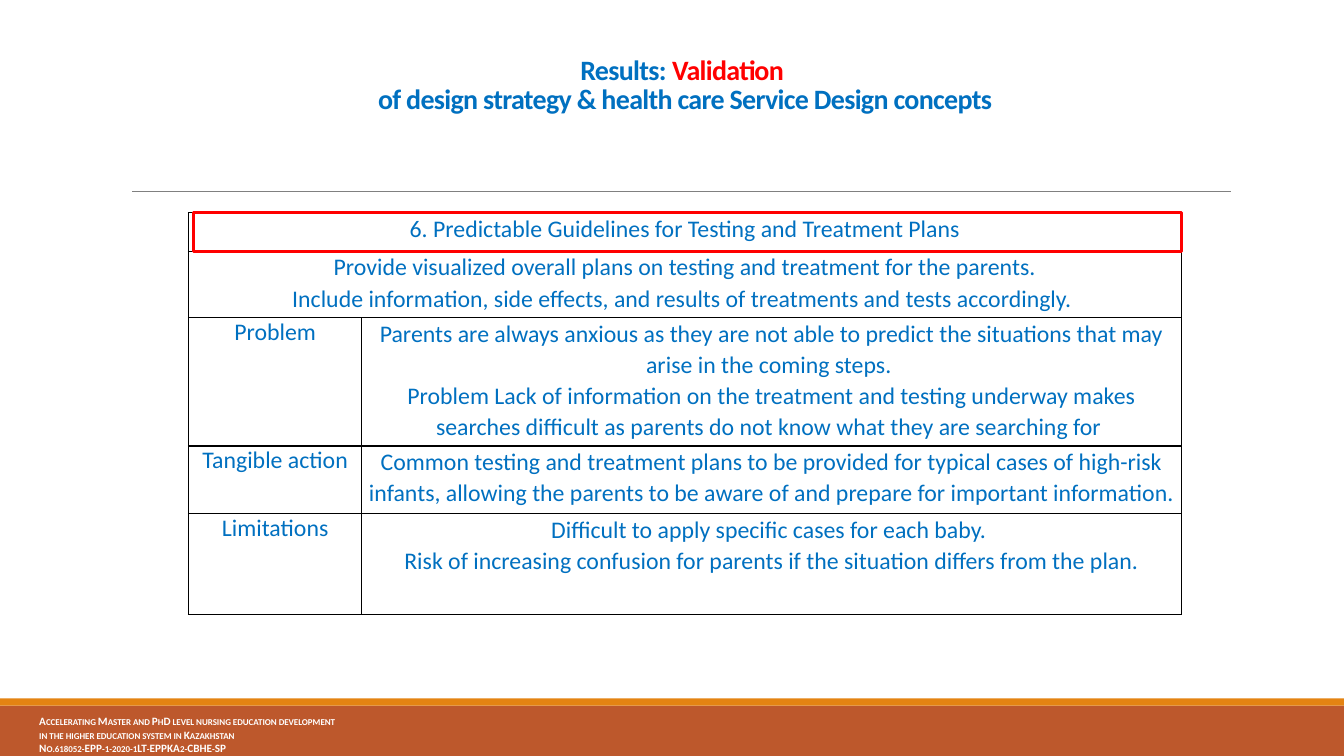
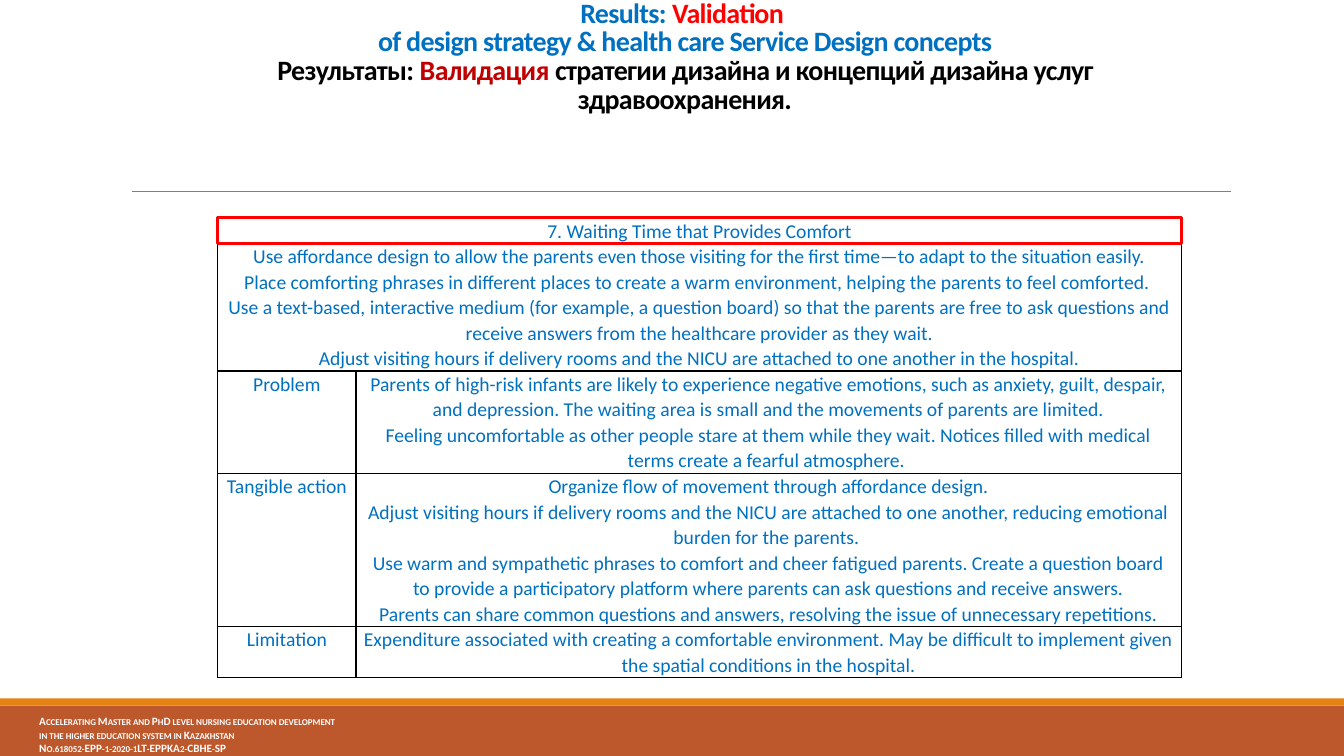
"""Builds two slides on the validation of health care service design concepts."""
from copy import deepcopy
from dataclasses import dataclass
from typing import NamedTuple, Optional, Sequence

from lxml.etree import SubElement
from pptx import Presentation
from pptx.dml.color import RGBColor
from pptx.enum.shapes import MSO_CONNECTOR as Connector, MSO_SHAPE as Shape
from pptx.enum.shapes import PP_PLACEHOLDER as Holder
from pptx.enum.text import MSO_ANCHOR as Anchor, MSO_AUTO_SIZE as AutoSize, PP_ALIGN as Align
from pptx.oxml.ns import qn
from pptx.util import Cm, Pt


@dataclass(frozen=True)
class Theme:
    font: str = "Calibri"
    white: str = "FFFFFF"
    black: str = "000000"
    blue: str = "0070C0"
    red: str = "FF0000"
    dark_red: str = "C00000"
    rust: str = "BD582C"
    orange: str = "E48312"
    grey: str = "808080"
    title_size: float = 20
    footer_size: float = 8
    border: float = 1
    marker: float = 2.25
    rule: float = 0.5


THEME = Theme()


class Run(NamedTuple):
    text: str
    color: str


class Box(NamedTuple):
    left: float
    top: float
    width: float
    height: float

    def lengths(self) -> tuple:
        return tuple(Cm(value) for value in self)


class Row(NamedTuple):
    height: float
    label: Optional[str]
    lines: Sequence[str]


@dataclass(frozen=True)
class Concept:
    title: Sequence[Run]
    left: float
    top: float
    columns: Sequence[float]
    rows: Sequence[Row]
    size: float
    margin: float
    label_spacing: float
    marker_inset: float


TITLE_BOX = Box(4.75, 0.2, 25.02, 2.82)
BANDS = (
    (Box(0, 17.78, 33.87, 1.27), THEME.rust),
    (Box(0, 17.6, 33.87, 0.18), THEME.orange),
)
FOOTER_BOX = Box(0.74, 17.88, 11.66, 1.3)
FOOTER = (
    "Accelerating Master and PhD level nursing education development",
    "in the higher education system in Kazakhstan",
    "No.618052-EPP-1-2020-1LT-EPPKA2-CBHE-SP",
)
ENGLISH_TITLE = (
    Run("Results: ", THEME.blue),
    Run("Validation \n", THEME.red),
    Run("of design strategy & health care Service Design concepts", THEME.blue),
)
RUSSIAN_TITLE = (
    Run("\nРезультаты: ", THEME.black),
    Run("Валидация", THEME.dark_red),
    Run(" стратегии дизайна и концепций дизайна услуг здравоохранения.", THEME.black),
)

CONCEPTS = (
    Concept(
        title=ENGLISH_TITLE,
        left=4.75, top=5.36, columns=(4.37, 20.65),
        size=17, margin=0.13, label_spacing=1, marker_inset=0.13,
        rows=(
            Row(0.97, None, ["6. Predictable Guidelines for Testing and Treatment Plans"]),
            Row(1.68, None, [
                "Provide visualized overall plans on testing and treatment for the parents.",
                "Include information, side effects, and results of treatments and tests accordingly. ",
            ]),
            Row(3.23, "Problem", [
                "Parents are always anxious as they are not able to predict the situations "
                "that may arise in the coming steps. ",
                "Problem Lack of information on the treatment and testing underway makes "
                "searches difficult as parents do not know what they are searching for ",
            ]),
            Row(1.7, "Tangible action", [
                "Common testing and treatment plans to be provided for typical cases of "
                "high-risk infants, allowing the parents to be aware of and prepare for "
                "important information. ",
            ]),
            Row(2.54, "Limitations", [
                "Difficult to apply specific cases for each baby. ",
                "Risk of increasing confusion for parents if the situation differs from the plan.",
            ]),
        ),
    ),
    Concept(
        title=ENGLISH_TITLE + RUSSIAN_TITLE,
        left=5.49, top=5.49, columns=(3.48, 20.8),
        size=14, margin=0.18, label_spacing=1.07, marker_inset=0,
        rows=(
            Row(0.6, None, ["7. Waiting Time that Provides Comfort"]),
            Row(2.97, None, [
                "Use affordance design to allow the parents even those visiting for the "
                "first time—to adapt to the situation easily.",
                "Place comforting phrases in different places to create a warm environment, "
                "helping the parents to feel comforted. ",
                "Use a text-based, interactive medium (for example, a question board) so that "
                "the parents are free to ask questions and receive answers from the healthcare "
                "provider as they wait.",
                "Adjust visiting hours if delivery rooms and the NICU are attached to one "
                "another in the hospital.",
            ]),
            Row(2.36, "Problem", [
                "Parents of high-risk infants are likely to experience negative emotions, such "
                "as anxiety, guilt, despair, and depression. The waiting area is small and the "
                "movements of parents are limited.",
                "Feeling uncomfortable as other people stare at them while they wait. Notices "
                "filled with medical terms create a fearful atmosphere. ",
            ]),
            Row(3.58, "Tangible action", [
                "Organize flow of movement through affordance design.",
                "Adjust visiting hours if delivery rooms and the NICU are attached to one "
                "another, reducing emotional burden for the parents. ",
                "Use warm and sympathetic phrases to comfort and cheer fatigued parents. Create "
                "a question board to provide a participatory platform where parents can ask "
                "questions and receive answers.",
                "Parents can share common questions and answers, resolving the issue of "
                "unnecessary repetitions.",
            ]),
            Row(1.27, "Limitation", [
                "Expenditure associated with creating a comfortable environment. May be "
                "difficult to implement given the spatial conditions in the hospital.",
            ]),
        ),
    ),
)


def rgb(color: str) -> RGBColor:
    return RGBColor.from_string(color)


def write(frame, paragraphs: Sequence[Sequence[Run]], *, size: float, bold: bool = False,
          align=Align.LEFT, spacing: float = 1, **attributes: str) -> None:
    """Fill a text frame; extra keywords become run property attributes."""
    frame.word_wrap = True
    for index, runs in enumerate(paragraphs):
        paragraph = frame.add_paragraph() if index else frame.paragraphs[0]
        paragraph.alignment, paragraph.line_spacing = align, spacing
        for text, color in runs:
            for position, piece in enumerate(text.split("\n")):
                if position:
                    paragraph.add_line_break()
                    line_break = paragraph._p.findall(qn("a:br"))[-1]
                    line_break.append(deepcopy(paragraph.runs[-1]._r.rPr))
                if not piece:
                    continue
                run = paragraph.add_run()
                run.text = piece
                run.font.name, run.font.size, run.font.bold = THEME.font, Pt(size), bold
                run.font.color.rgb = rgb(color)
                for key, value in attributes.items():
                    run._r.rPr.set(key, value)


def add_rectangle(slide, box: Box, fill: Optional[str] = None, line: Optional[str] = None):
    rectangle = slide.shapes.add_shape(Shape.RECTANGLE, *box.lengths())
    rectangle.shadow.inherit = False
    if fill:
        rectangle.fill.solid()
        rectangle.fill.fore_color.rgb = rgb(fill)
    else:
        rectangle.fill.background()
    if line:
        rectangle.line.color.rgb = rgb(line)
        rectangle.line.width = Pt(THEME.marker)
    else:
        rectangle.line.fill.background()
    return rectangle


def build_layout(slide) -> None:
    """Draw the bands, rule and footer, and hand them to the slide's layout."""
    layout = slide.slide_layout
    for holder in list(layout.placeholders):
        if holder.placeholder_format.type != Holder.TITLE:
            holder._element.getparent().remove(holder._element)
    shared = [add_rectangle(slide, box, fill=color) for box, color in BANDS]
    rule = slide.shapes.add_connector(Connector.STRAIGHT, Cm(3.33), Cm(4.83), Cm(31.01), Cm(4.83))
    rule.line.color.rgb = rgb(THEME.grey)
    rule.line.width = Pt(THEME.rule)
    SubElement(rule._element.spPr, qn("a:effectLst"))
    footer = slide.shapes.add_textbox(*FOOTER_BOX.lengths())
    write(footer.text_frame, [[Run(line, THEME.white)] for line in FOOTER],
          size=THEME.footer_size, bold=True, cap="small")
    for shape in (*shared, rule, footer):
        layout.shapes._spTree.append(shape._element)


def set_title(slide, runs: Sequence[Run]) -> None:
    title = slide.shapes.title
    title.left, title.top, title.width, title.height = TITLE_BOX.lengths()
    title.text_frame.vertical_anchor = Anchor.BOTTOM
    title.text_frame.auto_size = AutoSize.NONE
    write(title.text_frame, [runs], size=THEME.title_size, bold=True,
          align=Align.CENTER, spacing=0.85, spc="-50")


def style_cell(cell, margin: float) -> None:
    properties = cell._tc.get_or_add_tcPr()
    for side in ("lnL", "lnR", "lnT", "lnB"):
        edge = SubElement(properties, qn(f"a:{side}"), w=str(Pt(THEME.border)))
        SubElement(SubElement(edge, qn("a:solidFill")), qn("a:srgbClr"), val=THEME.black)
    cell.fill.solid()
    cell.fill.fore_color.rgb = rgb(THEME.white)
    cell.margin_left = cell.margin_right = Cm(margin)
    cell.margin_top = cell.margin_bottom = 0


def add_concept_table(slide, concept: Concept) -> None:
    box = Box(concept.left, concept.top, sum(concept.columns),
              sum(row.height for row in concept.rows))
    table = slide.shapes.add_table(len(concept.rows), len(concept.columns), *box.lengths()).table
    table.first_row = table.horz_banding = False
    for column, width in zip(table.columns, concept.columns):
        column.width = Cm(width)
    for index, row in enumerate(concept.rows):
        table.rows[index].height = Cm(row.height)
        label, body = table.cell(index, 0), table.cell(index, 1)
        for cell in (label, body):
            style_cell(cell, concept.margin)
        if row.label:
            write(label.text_frame, [[Run(row.label, THEME.blue)]], size=concept.size,
                  align=Align.CENTER, spacing=concept.label_spacing)
        else:
            label.merge(body)
            body = label
        write(body.text_frame, [[Run(line, THEME.blue)] for line in row.lines],
              size=concept.size, align=Align.CENTER, spacing=1.07)
    inset = concept.marker_inset
    add_rectangle(slide, Box(box.left + inset, box.top, box.width - inset,
                             max(concept.rows[0].height, 0.64)), line=THEME.red)


def main() -> None:
    deck = Presentation()
    deck.slide_width, deck.slide_height = Cm(33.87), Cm(19.05)
    title_only = deck.slide_layouts[5]
    for number, concept in enumerate(CONCEPTS):
        slide = deck.slides.add_slide(title_only)
        if number == 0:
            build_layout(slide)
        set_title(slide, concept.title)
        add_concept_table(slide, concept)
    deck.save("out.pptx")


if __name__ == "__main__":
    main()
